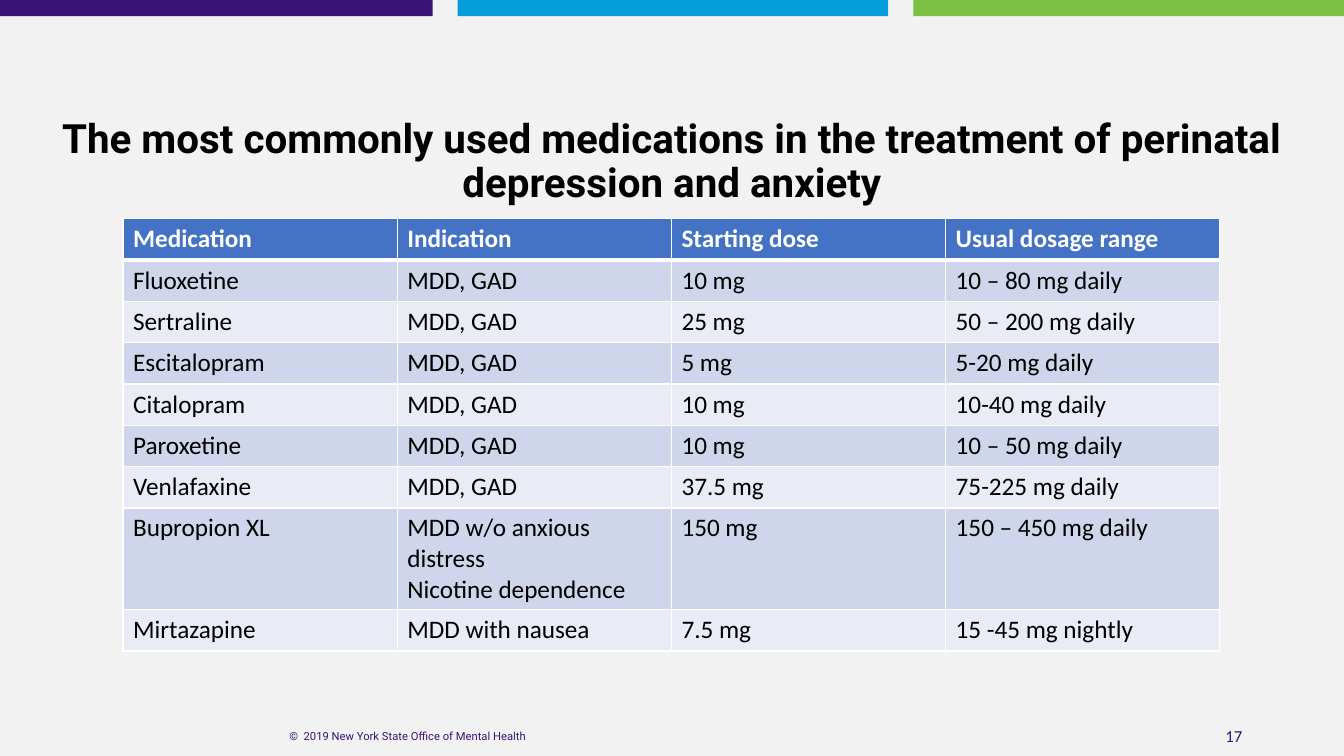
from dataclasses import dataclass

from lxml import etree
from pptx import Presentation
from pptx import util as u
from pptx.dml.color import RGBColor
from pptx.enum import shapes, text
from pptx.oxml import ns


@dataclass(frozen=True)
class Theme:
    """Colours, fonts and type sizes of the deck."""

    backdrop: str = "F2F2F2"
    purple: str = "391378"
    sky: str = "049FDA"
    green: str = "7BBF43"
    header: str = "4472C4"
    bands: tuple = ("CFD5EA", "E9EBF5")
    ink: str = "000000"
    white: str = "FFFFFF"
    heading_font: str = "Roboto"
    body_font: str = "Calibri"
    title_size: float = 28.8
    table_size: float = 18
    number_size: float = 12
    footer_size: float = 8


class SlideBuilder:
    """Draws styled elements on one page."""

    def __init__(self, page, theme):
        """Keep the page and its theme."""
        self.page = page
        self.theme = theme

    def background(self, colour):
        """Fill the page background."""
        fill = self.page.background.fill
        fill.solid()
        fill.fore_color.rgb = RGBColor.from_string(colour)

    def bar(self, left, width, height, colour):
        """Draw a plain bar along the top edge."""
        bar = self.page.shapes.add_shape(
            shapes.MSO_SHAPE.RECTANGLE,
            u.Inches(left), u.Inches(0), u.Inches(width), u.Inches(height))
        bar.shadow.inherit = False
        bar.fill.solid()
        bar.fill.fore_color.rgb = RGBColor.from_string(colour)
        bar.line.fill.background()

    def style(self, frame, font, size, colour, bold=False):
        """Format every run of a text frame."""
        for para in frame.paragraphs:
            for span in para.runs:
                span.font.name = font
                span.font.size = u.Pt(size)
                span.font.bold = bold
                span.font.color.rgb = RGBColor.from_string(colour)

    def label(self, words, place, align, font, size, colour, bold=False, spacing=1.0):
        """Add a vertically centred text box."""
        box = self.page.shapes.add_textbox(*map(u.Inches, place))
        frame = box.text_frame
        frame.word_wrap = True
        frame.vertical_anchor = text.MSO_ANCHOR.MIDDLE
        frame.text = words
        frame.paragraphs[0].alignment = align
        frame.paragraphs[0].line_spacing = spacing
        self.style(frame, font, size, colour, bold)

    def borders(self, cell, widths):
        """Set the white borders of a cell from side widths in points."""
        properties = cell._tc.get_or_add_tcPr()
        for side, width in widths.items():
            line = etree.SubElement(properties, ns.qn(f"a:ln{side}"), w=str(u.Pt(width)))
            fill = etree.SubElement(line, ns.qn("a:solidFill"))
            etree.SubElement(fill, ns.qn("a:srgbClr"), val=self.theme.white)

    def table(self, rows, left, top, column_width, line_heights):
        """Add a table with a header row and banded body rows."""
        theme = self.theme
        heights = [line_heights[row_lines] for row_lines in (
            3 if any("\n" in words for words in row) else 1 for row in rows)]
        table = self.page.shapes.add_table(
            len(rows), len(rows[0]), u.Inches(left), u.Inches(top),
            u.Inches(column_width * len(rows[0])), u.Inches(sum(heights))).table
        for column in table.columns:
            column.width = u.Inches(column_width)
        for index, (row, height) in enumerate(zip(rows, heights)):
            table.rows[index].height = u.Inches(height)
            is_header = index == 0
            fill = theme.header if is_header else theme.bands[(index - 1) % 2]
            colour = theme.white if is_header else theme.ink
            widths = {"L": 1, "R": 1, "T": 3 if index == 1 else 1, "B": 3 if is_header else 1}
            for position, words in enumerate(row):
                cell = table.cell(index, position)
                self.borders(cell, widths)
                cell.fill.solid()
                cell.fill.fore_color.rgb = RGBColor.from_string(fill)
                cell.text_frame.text = words
                self.style(cell.text_frame, theme.body_font, theme.table_size, colour, is_header)


MEDICATIONS = [
    ("Medication", "Indication", "Starting dose", "Usual dosage range"),
    ("Fluoxetine", "MDD, GAD", "10 mg", "10 – 80 mg daily"),
    ("Sertraline", "MDD, GAD", "25 mg", "50 – 200 mg daily"),
    ("Escitalopram", "MDD, GAD", "5 mg", "5-20 mg daily"),
    ("Citalopram", "MDD, GAD", "10 mg", "10-40 mg daily"),
    ("Paroxetine", "MDD, GAD", "10 mg", "10 – 50 mg daily"),
    ("Venlafaxine", "MDD, GAD", "37.5 mg", "75-225 mg daily"),
    ("Bupropion XL", "MDD w/o anxious distress\nNicotine dependence", "150 mg", "150 – 450 mg daily"),
    ("Mirtazapine", "MDD with nausea", "7.5 mg", "15 -45 mg nightly"),
]


def main():
    """Build and save the medication slide."""
    deck = Presentation()
    deck.slide_width, deck.slide_height = u.Inches(13.33), u.Inches(7.5)
    theme = Theme()
    builder = SlideBuilder(deck.slides.add_slide(deck.slide_layouts[6]), theme)
    align = text.PP_ALIGN

    builder.background(theme.backdrop)
    for left, width, colour in ((0, 4.29, theme.purple), (4.54, 4.27, theme.sky), (9.06, 4.27, theme.green)):
        builder.bar(left, width, 0.16, colour)
    builder.label("17", (9.42, 7.1, 3, 0.4), align.RIGHT,
                  theme.body_font, theme.number_size, theme.purple)
    builder.label("©  2019 New York State Office of Mental Health", (1.81, 7.1, 4.47, 0.4),
                  align.CENTER, theme.heading_font, theme.footer_size, theme.purple)
    builder.label("The most commonly used medications in the treatment of perinatal depression and anxiety",
                  (0, 1.22, 13.33, 0.78), align.CENTER, theme.heading_font,
                  theme.title_size, theme.ink, bold=True, spacing=0.9)
    builder.table(MEDICATIONS, 1.22, 2.17, 2.72, {1: 0.41, 3: 1.01})
    deck.save("out.pptx")


if __name__ == "__main__":
    main()
